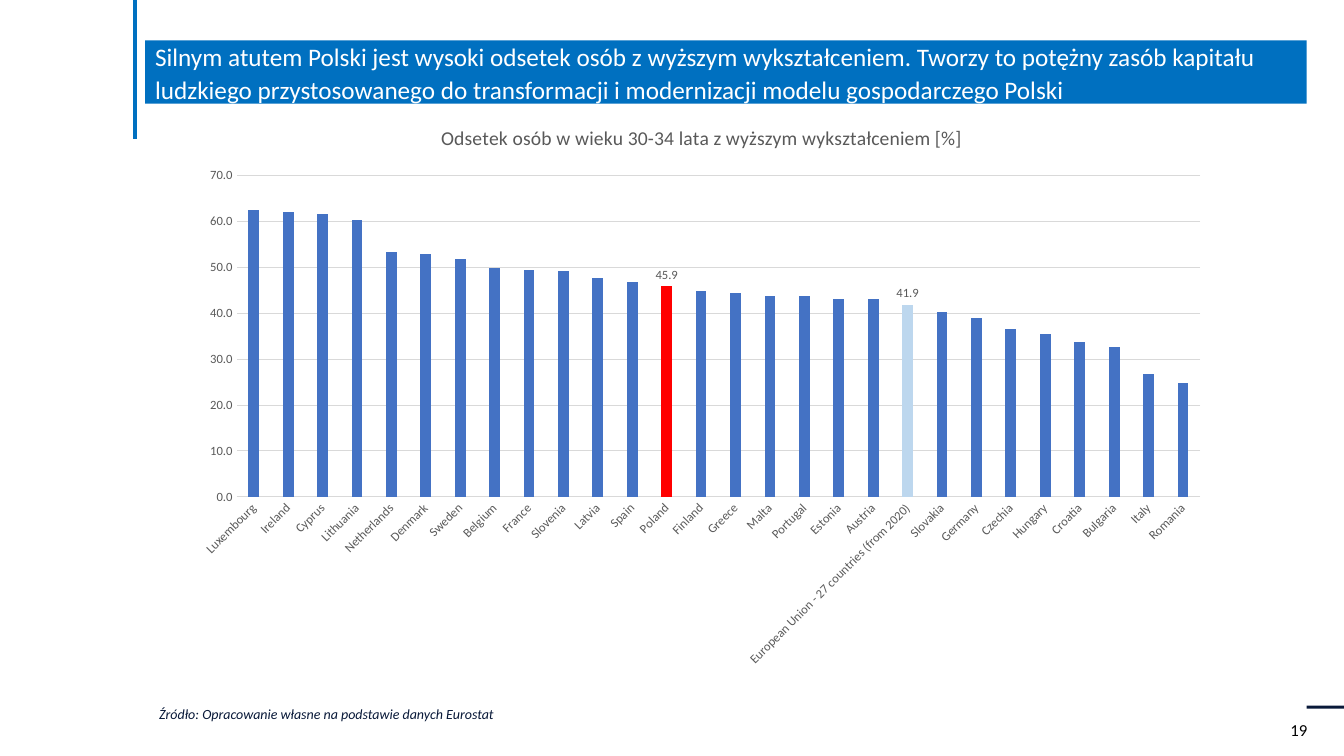
from lxml.etree import SubElement
from pptx import Presentation
from pptx.chart.data import CategoryChartData
from pptx.dml.color import RGBColor
from pptx.enum.chart import XL_CHART_TYPE, XL_LABEL_POSITION, XL_TICK_MARK
from pptx.enum.shapes import MSO_CONNECTOR, MSO_SHAPE
from pptx.enum.text import MSO_ANCHOR, PP_ALIGN
from pptx.oxml.ns import qn
from pptx.util import Inches, Pt

FONT = "Calibri"
COLORS = {
    "blue": "0070C0", "navy": "091939", "white": "FFFFFF", "black": "000000",
    "gray": "595959", "grid": "D9D9D9",
    "bar": "4472C4", "poland": "FF0000", "union": "BDD7EE",
}
UNION = "European Union - 27 countries (from 2020)"
SHARES = {
    "Luxembourg": 62.5, "Ireland": 62, "Cyprus": 61.5, "Lithuania": 60.2,
    "Netherlands": 53.4, "Denmark": 52.8, "Sweden": 51.9, "Belgium": 49.9,
    "France": 49.5, "Slovenia": 49.2, "Latvia": 47.7, "Spain": 46.7,
    "Poland": 45.9, "Finland": 44.9, "Greece": 44.3, "Malta": 43.7,
    "Portugal": 43.7, "Estonia": 43.1, "Austria": 43, UNION: 41.9,
    "Slovakia": 40.2, "Germany": 38.9, "Czechia": 36.5, "Hungary": 35.5,
    "Croatia": 33.7, "Bulgaria": 32.7, "Italy": 26.8, "Romania": 24.8,
}
MARKED = {"Poland": "poland", UNION: "union"}


def rgb(name):
    return RGBColor.from_string(COLORS[name])


def set_font(font, size, color, italic=False):
    font.name, font.size = FONT, Pt(size)
    font.bold, font.italic = False, italic
    font.color.rgb = rgb(color)


def put_text(frame, text, size=12, color="black", italic=False,
             space=None, after=0, anchor=MSO_ANCHOR.TOP):
    frame.word_wrap = True
    frame.vertical_anchor = anchor
    para = frame.paragraphs[0]
    para.alignment = PP_ALIGN.LEFT
    para.line_spacing = space
    para.space_after = Pt(after)
    run = para.add_run()
    run.text = text
    set_font(run.font, size, color, italic)


def add_text(slide, box, text, **style):
    shape = slide.shapes.add_textbox(*map(Inches, box))
    put_text(shape.text_frame, text, **style)


def add_bar(slide, box, color):
    shape = slide.shapes.add_shape(MSO_SHAPE.RECTANGLE, *map(Inches, box))
    shape.shadow.inherit = False
    shape.fill.solid()
    shape.fill.fore_color.rgb = rgb(color)
    shape.line.fill.background()
    return shape


def add_line(slide, ends, color, width):
    line = slide.shapes.add_connector(MSO_CONNECTOR.STRAIGHT, *map(Inches, ends))
    line.line.color.rgb = rgb(color)
    line.line.width = Pt(width)
    SubElement(line.element.spPr, qn("a:effectLst"))


def style_axis(axis):
    axis.major_tick_mark = axis.minor_tick_mark = XL_TICK_MARK.NONE
    set_font(axis.tick_labels.font, 9, "gray")


def style_line(line):
    line.color.rgb = rgb("grid")
    line.width = Pt(0.75)


def add_chart(slide, box, title):
    data = CategoryChartData(number_format="0.0")
    data.categories = list(SHARES)
    data.add_series("Series 1", list(SHARES.values()))
    chart = slide.shapes.add_chart(
        XL_CHART_TYPE.COLUMN_CLUSTERED, *map(Inches, box), data).chart
    set_font(chart.font, 10, "black")
    chart.has_legend = False
    chart.has_title = True
    head = chart.chart_title.text_frame
    head.text = title
    set_font(head.paragraphs[0].runs[0].font, 14, "gray")

    # Axes
    cats, vals = chart.category_axis, chart.value_axis
    style_axis(cats)
    style_axis(vals)
    style_line(cats.format.line)
    style_line(vals.major_gridlines.format.line)
    vals.format.line.fill.background()
    vals.minimum_scale, vals.maximum_scale, vals.major_unit = 0, 70, 10
    vals.tick_labels.number_format = "#,##0.0"
    vals.tick_labels.number_format_is_linked = False
    for body in chart.element.xpath(".//c:catAx/c:txPr/a:bodyPr"):
        body.set("rot", "-2700000")

    # Columns, with the marked ones labelled
    plot = chart.plots[0]
    plot.gap_width, plot.overlap = 219, -27
    plot.vary_by_categories = False
    series = plot.series[0]
    series.invert_if_negative = False
    series.format.fill.solid()
    series.format.fill.fore_color.rgb = rgb("bar")
    names = list(SHARES)
    for name, color in MARKED.items():
        point = series.points[names.index(name)]
        point.format.fill.solid()
        point.format.fill.fore_color.rgb = rgb(color)
        set_font(point.data_label.font, 9, "gray")
        point.data_label.position = XL_LABEL_POSITION.OUTSIDE_END


def main():
    deck = Presentation()
    deck.slide_width, deck.slide_height = Inches(13.33), Inches(7.5)
    slide = deck.slides.add_slide(deck.slide_layouts[6])

    # Page number
    add_text(slide, (12.7, 7.09, 0.45, 0.3), "19")
    add_bar(slide, (12.96, 7, 0.37, 0.03), "navy")

    # Headline
    band = add_bar(slide, (1.44, 0.4, 11.52, 0.63), "blue")
    put_text(band.text_frame,
             "Silnym atutem Polski jest wysoki odsetek osób z wyższym "
             "wykształceniem. Tworzy to potężny zasób kapitału ludzkiego "
             "przystosowanego do transformacji i modernizacji modelu "
             "gospodarczego Polski",
             size=18, color="white", space=1.07, after=8,
             anchor=MSO_ANCHOR.MIDDLE)

    # Source note
    add_text(slide, (1.48, 6.87, 5.01, 0.33),
             "Źródło: Opracowanie własne na podstawie danych Eurostat",
             size=10, color="navy", italic=True, space=1.5)

    # Chart and side rule
    add_chart(slide, (1.81, 1.03, 10.3, 5.7),
              "Odsetek osób w wieku 30-34 lata z wyższym wykształceniem [%]")
    add_line(slide, (1.34, 0, 1.34, 1.38), "blue", 3)
    deck.save("out.pptx")


if __name__ == "__main__":
    main()
